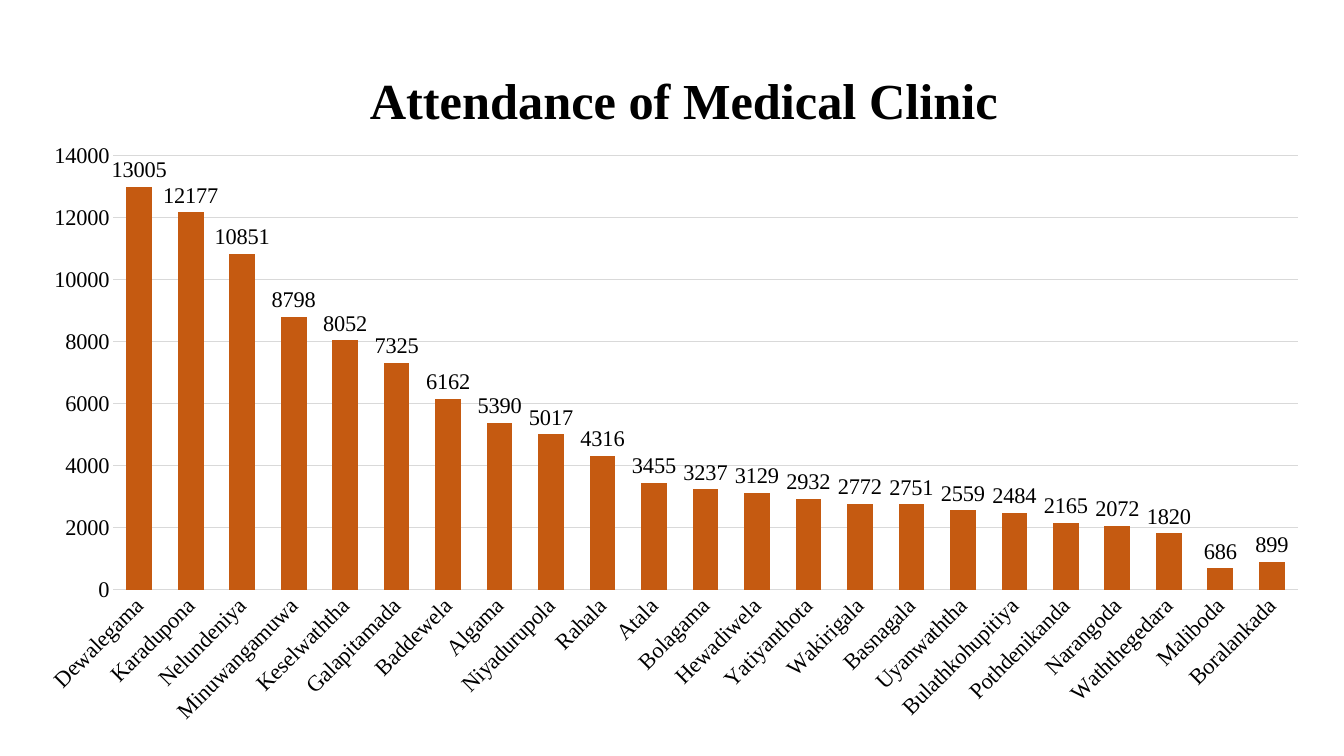
import pptx
import pptx.chart.data
import pptx.dml.color
import pptx.enum.chart
import pptx.oxml
import pptx.oxml.ns
import pptx.util

Pt = pptx.util.Pt
COLORS = {"text": "000000", "grid": "D9D9D9", "bar": "C55A11"}
FONT = "Times New Roman"

ATTENDANCE = {
    "Dewalegama": 13005, "Karadupona": 12177, "Nelundeniya": 10851,
    "Minuwangamuwa": 8798, "Keselwaththa": 8052, "Galapitamada": 7325,
    "Baddewela": 6162, "Algama": 5390, "Niyadurupola": 5017,
    "Rahala": 4316, "Atala": 3455, "Bolagama": 3237,
    "Hewadiwela": 3129, "Yatiyanthota": 2932, "Wakirigala": 2772,
    "Basnagala": 2751, "Uyanwaththa": 2559, "Bulathkohupitiya": 2484,
    "Pothdenikanda": 2165, "Narangoda": 2072, "Waththegedara": 1820,
    "Maliboda": 686, "Boralankada": 899,
}


def rgb(name):
    return pptx.dml.color.RGBColor.from_string(COLORS[name])


def style_font(font, size, bold=False):
    font.name = FONT
    font.size = Pt(size)
    font.bold = bold
    font.color.rgb = rgb("text")


def style_line(line, width):
    line.color.rgb = rgb("grid")
    line.width = Pt(width)


def place(parent, before, **fractions):
    for old in parent.xpath("./c:layout"):
        parent.remove(old)
    target = '<c:layoutTarget val="inner"/>' if "w" in fractions else ""
    modes = "".join(f'<c:{key}Mode val="edge"/>' for key in "xy")
    values = "".join(f'<c:{key} val="{value}"/>' for key, value in fractions.items())
    layout = pptx.oxml.parse_xml(
        f'<c:layout {pptx.oxml.ns.nsdecls("c")}><c:manualLayout>'
        f"{target}{modes}{values}</c:manualLayout></c:layout>"
    )
    parent.xpath(f"./{before}")[0].addprevious(layout)


def add_heading(chart, text):
    chart.has_title = True
    heading = chart.chart_title
    run = heading.text_frame.paragraphs[0].add_run()
    run.text = text
    style_font(run.font, 36, bold=True)
    heading.include_in_layout = False
    place(heading._element, "c:overlay", x=0.26, y=0.05)


def style_axes(chart):
    tick_none = pptx.enum.chart.XL_TICK_MARK.NONE
    clinics, visits = chart.category_axis, chart.value_axis
    for axis in (clinics, visits):
        axis.major_tick_mark = axis.minor_tick_mark = tick_none
        style_font(axis.tick_labels.font, 16)
    style_line(clinics.format.line, 1)
    chart.element.xpath(".//c:catAx/c:txPr/a:bodyPr")[0].set("rot", "-2700000")
    visits.format.line.fill.background()
    visits.minimum_scale, visits.maximum_scale, visits.major_unit = 0, 14000, 2000
    visits.has_major_gridlines = True
    style_line(visits.major_gridlines.format.line, 0.75)


def style_bars(plot):
    plot.gap_width = 100
    plot.overlap = -24
    plot.vary_by_categories = False
    bars = plot.series[0]
    bars.format.fill.solid()
    bars.format.fill.fore_color.rgb = rgb("bar")
    bars.invert_if_negative = False
    labels = bars.data_labels
    labels.show_value = True
    labels.position = pptx.enum.chart.XL_LABEL_POSITION.OUTSIDE_END
    style_font(labels.font, 16)


def add_attendance_chart(slide, left, top, width, height):
    data = pptx.chart.data.CategoryChartData()
    data.categories = list(ATTENDANCE)
    data.add_series("Series 1", list(ATTENDANCE.values()))
    chart = slide.shapes.add_chart(
        pptx.enum.chart.XL_CHART_TYPE.COLUMN_CLUSTERED,
        Pt(left), Pt(top), Pt(width), Pt(height), data,
    ).chart
    chart.has_legend = False
    style_font(chart.font, 10)
    add_heading(chart, "Attendance of Medical Clinic")
    style_axes(chart)
    style_bars(chart.plots[0])
    plot_area = chart.element.xpath(".//c:plotArea")[0]
    place(plot_area, "c:barChart", x=0.07, y=0.185, w=0.91, h=0.607)


def main():
    deck = pptx.Presentation()
    deck.slide_width, deck.slide_height = Pt(960), Pt(540)
    slide = deck.slides.add_slide(deck.slide_layouts[6])
    add_attendance_chart(slide, 16, 17, 929.5, 510.5)
    deck.save("out.pptx")


if __name__ == "__main__":
    main()
